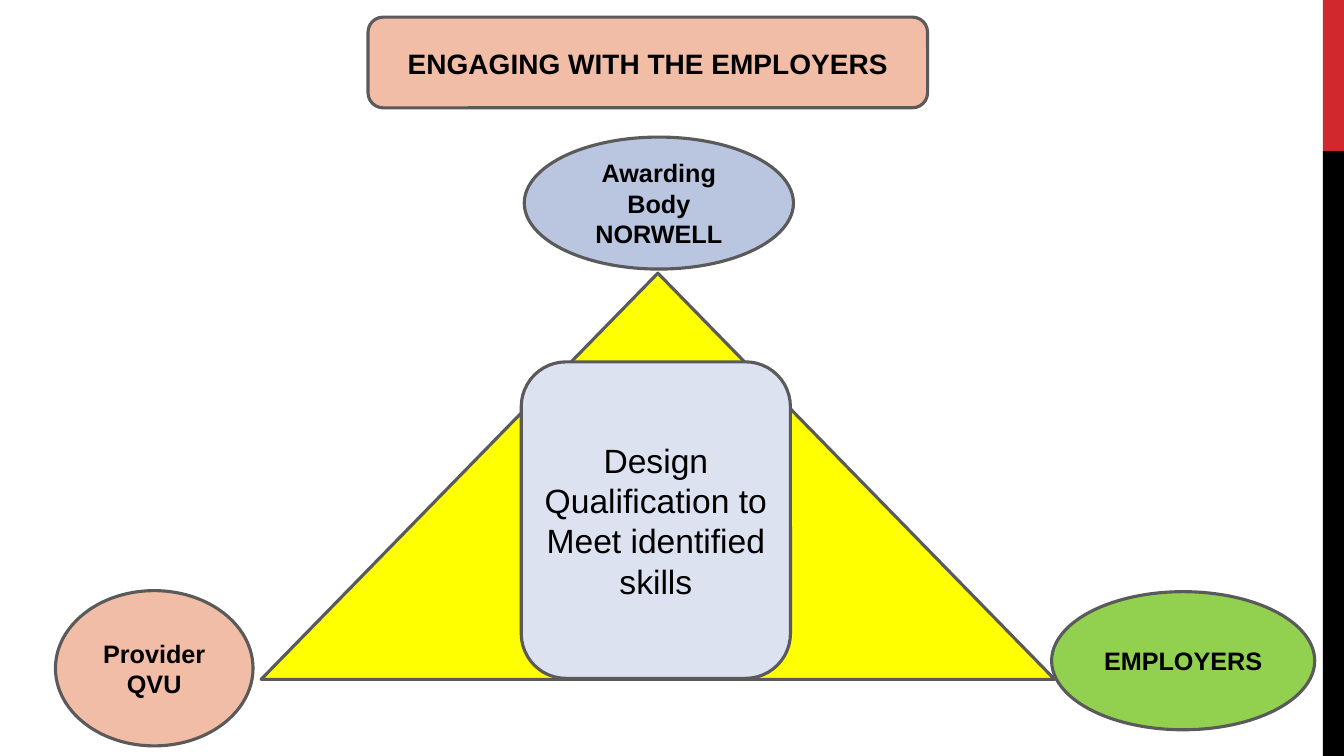
"""Build the slide on engaging with employers."""
from dataclasses import dataclass

from pptx import Presentation
from pptx.dml.color import RGBColor
from pptx.enum import shapes, text
from pptx.util import Inches, Pt

SHAPE = shapes.MSO_SHAPE


@dataclass(frozen=True)
class Theme:
    """Hold the colours, font and type sizes."""
    font: str = "Arial"
    ink: str = "000000"
    outline: str = "5A5A5A"
    red: str = "D1282E"
    yellow: str = "FFFF00"
    blue: str = "BAC5DF"
    pale_blue: str = "DCE2EF"
    green: str = "92D050"
    peach: str = "F1BDA7"
    title_size: int = 20
    centre_size: int = 24
    partner_size: int = 18
    outline_width: float = 2.25


THEME = Theme()


def write(frame, words, size, bold):
    """Set centred, wrapped text in a frame."""
    frame.text = words
    frame.word_wrap = True
    frame.auto_size = text.MSO_AUTO_SIZE.NONE
    frame.vertical_anchor = text.MSO_ANCHOR.MIDDLE
    paragraph = frame.paragraphs[0]
    paragraph.alignment = text.PP_ALIGN.CENTER
    font = paragraph.runs[0].font
    font.name, font.size, font.bold = THEME.font, Pt(size), bold
    font.color.rgb = RGBColor.from_string(THEME.ink)


def add_block(slide, kind, box, fill, outlined=True):
    """Add a flat filled shape, outlined on request."""
    block = slide.shapes.add_shape(kind, *map(Inches, box))
    block.shadow.inherit = False
    block.fill.solid()
    block.fill.fore_color.rgb = RGBColor.from_string(fill)
    if outlined:
        block.line.color.rgb = RGBColor.from_string(THEME.outline)
        block.line.width = Pt(THEME.outline_width)
    else:
        block.line.fill.background()
    return block


def add_partner(slide, words, box, fill):
    """Add a named ellipse at a corner of the triangle."""
    partner = add_block(slide, SHAPE.OVAL, box, fill)
    write(partner.text_frame, words, THEME.partner_size, True)


def add_heading(slide, words, box):
    """Place the title on a rounded panel."""
    add_block(slide, SHAPE.ROUNDED_RECTANGLE, box, THEME.peach)
    title = slide.shapes.title
    title.left, title.top, title.width, title.height = map(Inches, box)
    write(title.text_frame, words, THEME.title_size, True)
    title.text_frame.paragraphs[0].line_spacing = 1.07
    slide.shapes._spTree.append(title._element)


def main():
    """Build and save the slide."""
    deck = Presentation()
    deck.slide_width, deck.slide_height = Inches(13.33), Inches(7.5)
    slide = deck.slides.add_slide(deck.slide_layouts[5])

    for top, height, fill in ((0, 1.5, THEME.red), (1.5, 6, THEME.ink)):
        add_block(slide, SHAPE.RECTANGLE, (13.12, top, 0.21, height), fill, outlined=False)

    add_block(slide, SHAPE.FLOWCHART_EXTRACT, (2.59, 2.71, 7.87, 4.03), THEME.yellow)
    add_partner(slide, "Awarding Body NORWELL", (5.2, 1.36, 2.67, 1.31), THEME.blue)
    add_partner(slide, "EMPLOYERS", (10.43, 5.87, 2.61, 1.37), THEME.green)
    add_partner(slide, "Provider QVU", (0.55, 5.86, 1.96, 1.54), THEME.peach)

    goal = add_block(slide, SHAPE.ROUNDED_RECTANGLE, (5.17, 3.59, 2.67, 3.14), THEME.pale_blue)
    write(goal.text_frame, "Design Qualification to Meet identified skills",
          THEME.centre_size, False)

    add_heading(slide, "ENGAGING WITH THE EMPLOYERS", (3.65, 0.17, 5.55, 0.9))
    deck.save("out.pptx")


if __name__ == "__main__":
    main()
